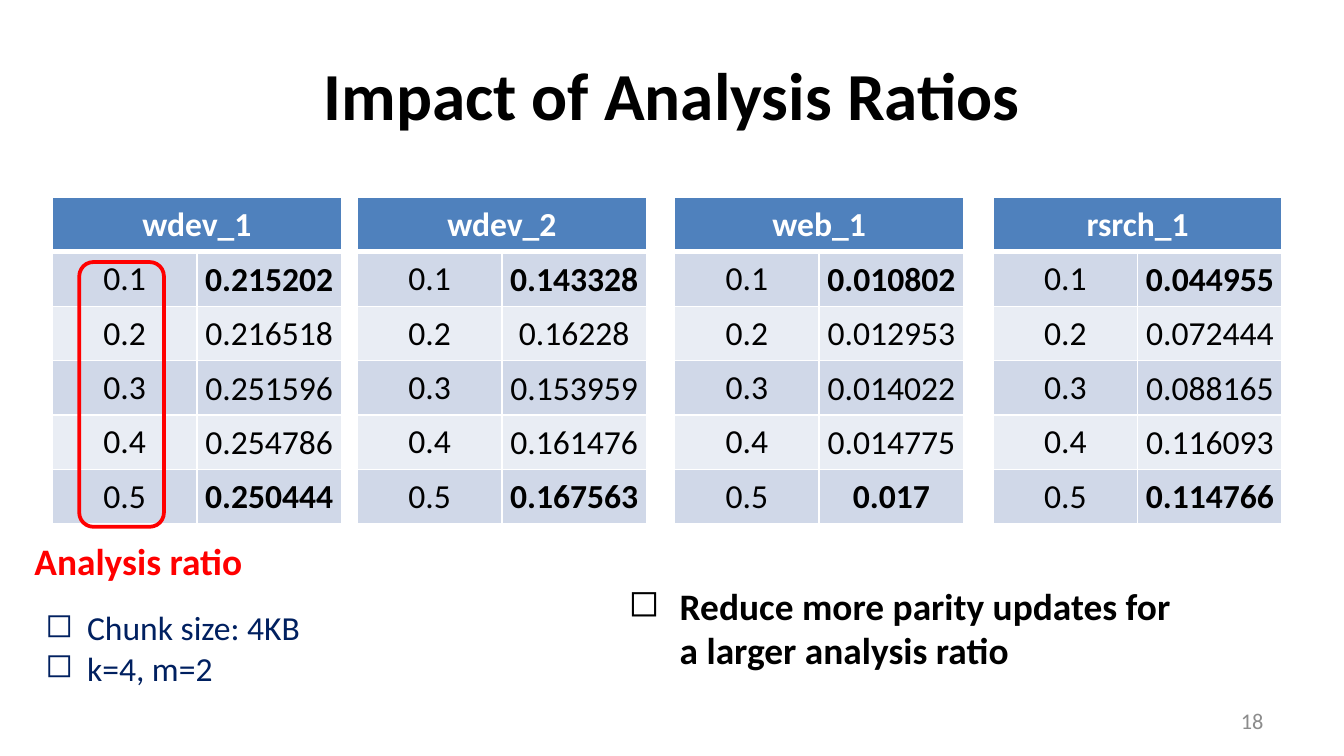
from lxml import etree
from pptx import Presentation, util as u
from pptx.dml.color import RGBColor
from pptx.enum import shapes, text
from pptx.oxml import ns

WHITE = RGBColor(0xFF, 0xFF, 0xFF)
BLACK = RGBColor(0, 0, 0)
RED = RGBColor(0xFF, 0, 0)
NAVY = RGBColor(0, 0x20, 0x60)
GRAY = RGBColor(0x8C, 0x8C, 0x8C)
HEADER = RGBColor(0x4F, 0x81, 0xBD)
BANDS = RGBColor(0xD0, 0xD8, 0xE8), RGBColor(0xE9, 0xED, 0xF4)

WIDTH, HEIGHT = u.Inches(10), u.Inches(5.625)
FONT = "Calibri"
LEFT, CENTER, RIGHT = text.PP_ALIGN.LEFT, text.PP_ALIGN.CENTER, text.PP_ALIGN.RIGHT
MIDDLE = text.MSO_ANCHOR.MIDDLE

RATIOS = "0.1", "0.2", "0.3", "0.4", "0.5"
TABLE_TOP, TABLE_WIDTH, TABLE_HEIGHT = 26.13, 21.5, 43.2
TRACES = [
    (3.9, "wdev_1", ("0.215202", "0.216518", "0.251596", "0.254786", "0.250444")),
    (26.6, "wdev_2", ("0.143328", "0.16228", "0.153959", "0.161476", "0.167563")),
    (50.2, "web_1", ("0.010802", "0.012953", "0.014022", "0.014775", "0.017")),
    (73.9, "rsrch_1", ("0.044955", "0.072444", "0.088165", "0.116093", "0.114766")),
]


def place(box):
    x, y, w, h = box
    return [round(share * side / 100) for share, side in
            ((x, WIDTH), (y, HEIGHT), (w, WIDTH), (h, HEIGHT))]


def write(p, words, size, color, bold=False, align=CENTER):
    p.alignment = align
    r = p.add_run()
    r.text = words
    for name, value in {"name": FONT, "size": u.Pt(size), "bold": bold}.items():
        setattr(r.font, name, value)
    r.font.color.rgb = color


def add_bullet(p, indent):
    pPr = p._p.get_or_add_pPr()
    pPr.set("marL", str(u.Inches(indent)))
    pPr.set("indent", str(-u.Inches(indent)))
    etree.SubElement(pPr, ns.qn("a:buChar"), char="◻")


def add_text(s, box, words, size, color, bold=False, align=CENTER):
    tf = s.shapes.add_textbox(*place(box)).text_frame
    tf.word_wrap = True
    tf.vertical_anchor = MIDDLE
    write(tf.paragraphs[0], words, size, color, bold, align)


def add_rounded(s, box):
    sp = s.shapes.add_shape(shapes.MSO_SHAPE.ROUNDED_RECTANGLE, *place(box))
    sp.shadow.inherit = False
    sp.fill.background()
    sp.line.fill.background()
    return sp


def add_note(s, box, lines, size, color, bold=False, align=LEFT, indent=0):
    tf = add_rounded(s, box).text_frame
    tf.word_wrap = True
    tf.vertical_anchor = MIDDLE
    for i, line in enumerate(lines):
        p = tf.add_paragraph() if i else tf.paragraphs[0]
        write(p, line, size, color, bold, align)
        if indent:
            add_bullet(p, indent)


def add_frame(s, box):
    sp = add_rounded(s, box)
    sp.line.color.rgb = RED
    sp.line.width = u.Pt(2)


def style_cell(cell, fill, bottom=1):
    tcPr = cell._tc.get_or_add_tcPr()
    for side, width in {"L": 1, "R": 1, "T": 1, "B": bottom}.items():
        ln = etree.SubElement(tcPr, ns.qn(f"a:ln{side}"), w=str(u.Pt(width)))
        solid = etree.SubElement(ln, ns.qn("a:solidFill"))
        etree.SubElement(solid, ns.qn("a:srgbClr"), val=str(WHITE))
    cell.fill.solid()
    cell.fill.fore_color.rgb = fill


def add_trace_table(s, box, name, values):
    table = s.shapes.add_table(len(values) + 1, 2, *place(box)).table
    table.cell(0, 0).merge(table.cell(0, 1))
    write(table.cell(0, 0).text_frame.paragraphs[0], name, 18, WHITE, True)
    for col in range(2):
        style_cell(table.cell(0, col), HEADER, 3)
    for row, (ratio, value) in enumerate(zip(RATIOS, values), 1):
        fill = BANDS[(row - 1) % 2]
        bold = row in (1, len(values))
        ratio_cell, value_cell = table.cell(row, 0), table.cell(row, 1)
        write(ratio_cell.text_frame.paragraphs[0], ratio, 18, BLACK)
        write(value_cell.text_frame.paragraphs[0], value, 18, BLACK, bold)
        edge = u.Inches(0.01)
        for attr, setting in {"margin_left": edge, "margin_right": edge, "margin_top": edge,
                              "margin_bottom": 0, "vertical_anchor": MIDDLE}.items():
            setattr(value_cell, attr, setting)
        for cell in (ratio_cell, value_cell):
            style_cell(cell, fill)


def main():
    prs = Presentation()
    prs.slide_width, prs.slide_height = WIDTH, HEIGHT
    s = prs.slides.add_slide(prs.slide_layouts[6])
    add_text(s, (5, 4.1, 90, 16.67), "Impact of Analysis Ratios", 36, BLACK, True)
    add_note(s, (45.3, 73.96, 43.3, 18.13),
             ["Reduce more parity updates for a larger analysis ratio"],
             20, BLACK, True, indent=0.38)
    add_note(s, (1.9, 76.62, 28.4, 18.13), ["Chunk size: 4KB", "k=4, m=2"],
             18, NAVY, indent=0.31)
    for left, name, values in TRACES:
        add_trace_table(s, (left, TABLE_TOP, TABLE_WIDTH, TABLE_HEIGHT), name, values)
    add_frame(s, (5.9, 34.67, 6.3, 35.02))
    add_note(s, (0, 69.87, 20.6, 8.53), ["Analysis ratio"], 20, RED, True, CENTER)
    add_text(s, (71.7, 92.62, 23.3, 5.33), "18", 12, GRAY, align=RIGHT)
    prs.save("out.pptx")


if __name__ == "__main__":
    main()
